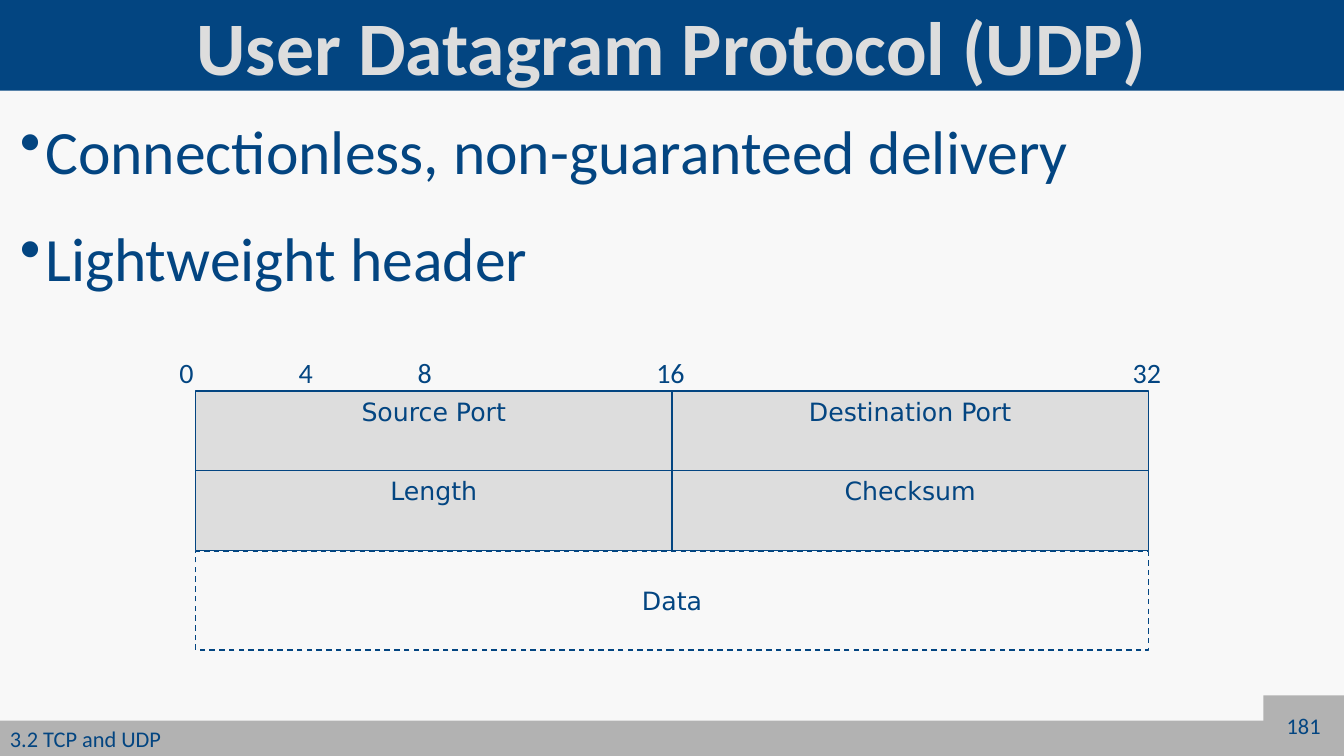
from lxml.etree import SubElement
from pptx import Presentation
from pptx.dml.color import RGBColor
from pptx.enum.dml import MSO_LINE
from pptx.enum.shapes import MSO_SHAPE as Shape
from pptx.enum.text import MSO_ANCHOR as Anchor, PP_ALIGN as Align
from pptx.oxml.ns import qn
from pptx.util import Inches, Pt

COLORS = {"navy": "034581", "light": "DDDDDD", "bar": "B2B2B2", "paper": "F8F8F8"}
WIDTH, HEIGHT = 13.33, 7.5


def write(paragraph, text, size, font="Calibri", color="navy", align=Align.CENTER):
    paragraph.text = text
    paragraph.alignment = align
    paragraph.font.size = Pt(size)
    paragraph.font.name = font
    paragraph.font.color.rgb = RGBColor.from_string(COLORS[color])


def add_box(left, top, width, height, fill=None, outlined=False, anchor=Anchor.MIDDLE):
    box = slide.shapes.add_shape(
        Shape.RECTANGLE, Inches(left), Inches(top), Inches(width), Inches(height))
    box.shadow.inherit = False
    if fill:
        box.fill.solid()
        box.fill.fore_color.rgb = RGBColor.from_string(COLORS[fill])
    else:
        box.fill.background()
    if outlined:
        box.line.color.rgb = RGBColor.from_string(COLORS["navy"])
        box.line.width = Pt(1)
    else:
        box.line.fill.background()
    box.text_frame.vertical_anchor = anchor
    return box


deck = Presentation()
deck.slide_width, deck.slide_height = Inches(WIDTH), Inches(HEIGHT)
slide = deck.slides.add_slide(deck.slide_layouts[6])
slide.background.fill.solid()
slide.background.fill.fore_color.rgb = RGBColor.from_string(COLORS["paper"])

# Bullets
body = slide.shapes.add_textbox(Inches(0.1), Inches(1), Inches(13.1), Inches(6.1))
body.text_frame.word_wrap = True
bullets = ["Connectionless, non-guaranteed delivery", "Lightweight header"]
for index, bullet in enumerate(bullets):
    para = body.text_frame.add_paragraph() if index else body.text_frame.paragraphs[0]
    write(para, bullet, 44, align=Align.LEFT)
    para.line_spacing = 1.1
    para.space_after = Pt(18)
    properties = para._p.get_or_add_pPr()
    properties.set("marL", str(Inches(0.25)))
    properties.set("indent", str(-Inches(0.25)))
    mark = SubElement(properties, qn("a:buChar"), char="•")
    properties.find(qn("a:defRPr")).addprevious(mark)

# Title and footer bars
title = add_box(0, 0, WIDTH, 0.9, "navy").text_frame.paragraphs[0]
write(title, "User Datagram Protocol (UDP)", 54, color="light")
title.font.bold = True
footer = add_box(0, HEIGHT - 0.35, WIDTH, 0.35, "bar")
write(footer.text_frame.paragraphs[0], "3.2 TCP and UDP", 16, align=Align.LEFT)
number = add_box(WIDTH - 0.8, HEIGHT - 0.6, 0.8, 0.6, "bar")
write(number.text_frame.paragraphs[0], "181", 16)

# Datagram: two 16-bit fields per row, then the data
LEFT, TOP, ROW, BIT = 1.94, 3.88, 0.79, 9.45 / 32
FIELDS = [["Source Port", "Destination Port"], ["Length", "Checksum"]]

data = add_box(LEFT, TOP + 2 * ROW + 0.01, 32 * BIT, 0.98, outlined=True)
data.line.dash_style = MSO_LINE.DASH
write(data.text_frame.paragraphs[0], "Data", 18, "DejaVu Sans")

for row, names in enumerate(FIELDS):
    for column, name in enumerate(names):
        field = add_box(LEFT + column * 16 * BIT, TOP + row * ROW, 16 * BIT, ROW,
                        "light", outlined=True, anchor=Anchor.TOP)
        write(field.text_frame.paragraphs[0], name, 18, "DejaVu Sans")

for bit in (0, 4, 8, 16, 32):
    label = str(bit)
    tick = slide.shapes.add_textbox(
        Inches(LEFT + bit * BIT - 0.26), Inches(TOP - 0.4),
        Inches(0.19 + 0.15 * len(label)), Inches(0.44))
    tick.text_frame.word_wrap = False
    write(tick.text_frame.paragraphs[0], label, 20)

deck.save("out.pptx")
